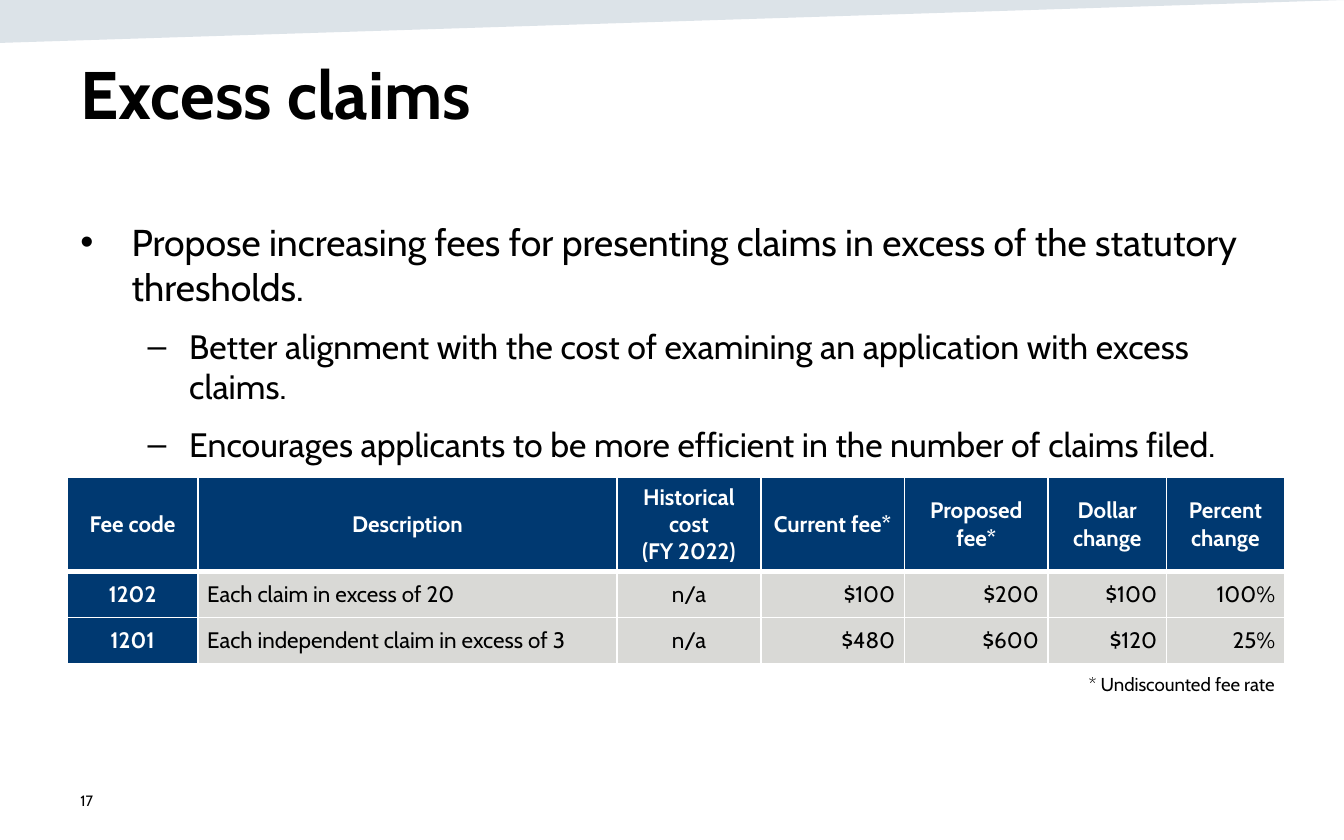
from dataclasses import dataclass

from lxml import etree
from pptx import Presentation
from pptx.dml.color import RGBColor
from pptx.enum.text import MSO_ANCHOR, PP_ALIGN
from pptx.oxml.ns import qn
from pptx.util import Pt

LEFT, CENTER, RIGHT = PP_ALIGN.LEFT, PP_ALIGN.CENTER, PP_ALIGN.RIGHT
TOP, MIDDLE = MSO_ANCHOR.TOP, MSO_ANCHOR.MIDDLE
FONT = "Cabin"
BLACK, WHITE, NAVY, GRAY, TEAL = "000000", "FFFFFF", "003971", "D9D9D6", "164469"
TITLE_ONLY = 5


@dataclass
class Bullet:
    text: str
    level: int
    size: float
    mark: str
    margin: float
    hanging: float


@dataclass
class Column:
    width: float
    align: PP_ALIGN
    texts: tuple[str, str, str]


BULLETS = [
    Bullet("Propose increasing fees for presenting claims in excess of the statutory thresholds.",
           0, 20, "•", 27.4, 27.4),
    Bullet("Better alignment with the cost of examining an application with excess claims.",
           1, 18.1, "–", 58.3, 22.3),
    Bullet("Encourages applicants to be more efficient in the number of claims filed.",
           1, 18.1, "–", 58.3, 22.3),
]

COLUMNS = [
    Column(70, CENTER, ("Fee code", "1202", "1201")),
    Column(224.6, LEFT, ("Description", "Each claim in excess of 20",
                         "Each independent claim in excess of 3")),
    Column(77, CENTER, ("Historical cost\n(FY 2022)", "n/a", "n/a")),
    Column(77, RIGHT, ("Current fee*", "$100", "$480")),
    Column(77, RIGHT, ("Proposed fee*", "$200", "$600")),
    Column(63.3, RIGHT, ("Dollar change", "$100", "$120")),
    Column(63.3, RIGHT, ("Percent change", "100%", "25%")),
]
ROW_HEIGHTS = [50.2, 24.8, 24.8]


def color(value: str) -> RGBColor:
    return RGBColor.from_string(value)


def format_text(frame, size: float, ink: str = BLACK, bold: bool = False,
                align: PP_ALIGN = LEFT) -> None:
    for para in frame.paragraphs:
        para.alignment = align
        for span in para.runs:
            span.font.name = FONT
            span.font.size = Pt(size)
            span.font.bold = bold
            span.font.color.rgb = color(ink)


def add_text(page, left: float, top: float, width: float, height: float, text: str,
             size: float, align: PP_ALIGN = LEFT, anchor: MSO_ANCHOR = TOP):
    box = page.shapes.add_textbox(Pt(left), Pt(top), Pt(width), Pt(height))
    frame = box.text_frame
    frame.word_wrap = True
    frame.vertical_anchor = anchor
    frame.text = text
    format_text(frame, size, align=align)
    return frame


def add_bullet(para, bullet: Bullet) -> None:
    para.level = bullet.level
    para.space_before = Pt(9)
    for span in para.runs:
        span.font.size = Pt(bullet.size)
    properties = para._p.get_or_add_pPr()
    properties.set("marL", str(Pt(bullet.margin)))
    properties.set("indent", str(-Pt(bullet.hanging)))
    etree.SubElement(properties, qn("a:buFont")).set("typeface", "Arial")
    etree.SubElement(properties, qn("a:buChar")).set("char", bullet.mark)


def set_borders(cell, widths: dict[str, float]) -> None:
    properties = cell._tc.get_or_add_tcPr()
    for index, (side, width) in enumerate(widths.items()):
        line = etree.Element(qn(f"a:ln{side}"), w=str(Pt(width)))
        fill = etree.SubElement(line, qn("a:solidFill"))
        etree.SubElement(fill, qn("a:srgbClr")).set("val", WHITE)
        properties.insert(index, line)


def fill_cell(cell, text: str, row: int, is_code: bool, align: PP_ALIGN) -> None:
    is_header = row == 0
    is_dark = is_header or is_code
    cell.margin_left = cell.margin_right = Pt(5)
    cell.margin_top = cell.margin_bottom = Pt(0)
    cell.vertical_anchor = MIDDLE
    cell.fill.solid()
    cell.fill.fore_color.rgb = color(NAVY if is_dark else GRAY)
    cell.text_frame.text = text
    format_text(cell.text_frame, 12, WHITE if is_dark else BLACK, is_dark,
                CENTER if is_header else align)
    if not is_header:
        for para in cell.text_frame.paragraphs:
            para.space_before = para.space_after = Pt(6)
    set_borders(cell, {"L": 1, "R": 1, "T": 3 if row == 1 else 1, "B": 3 if is_header else 1})


def add_fee_table(page, left: float, top: float) -> None:
    width = sum(column.width for column in COLUMNS)
    frame = page.shapes.add_table(len(ROW_HEIGHTS), len(COLUMNS), Pt(left), Pt(top),
                                  Pt(width), Pt(sum(ROW_HEIGHTS)))
    table = frame.table
    table.horz_banding = False
    for row, height in enumerate(ROW_HEIGHTS):
        table.rows[row].height = Pt(height)
    for index, column in enumerate(COLUMNS):
        table.columns[index].width = Pt(column.width)
        for row, text in enumerate(column.texts):
            fill_cell(table.cell(row, index), text, row, index == 0, column.align)


def add_top_wedge(page) -> None:
    builder = page.shapes.build_freeform(0, 0)
    builder.add_line_segments([(0, Pt(23)), (Pt(720), 0)], close=True)
    wedge = builder.convert_to_shape()
    wedge.shadow.inherit = False
    wedge.line.fill.background()
    wedge.fill.solid()
    wedge.fill.fore_color.rgb = color(TEAL)
    tint = wedge._element.spPr.find(f".//{qn('a:srgbClr')}")
    etree.SubElement(tint, qn("a:alpha")).set("val", "15000")


def main() -> None:
    deck = Presentation()
    deck.slide_width, deck.slide_height = Pt(720), Pt(450)
    page = deck.slides.add_slide(deck.slide_layouts[TITLE_ONLY])

    # Top band
    add_top_wedge(page)

    # Title
    title = page.shapes.title
    title.left, title.top, title.width, title.height = Pt(36), Pt(24.5), Pt(648), Pt(75)
    title.text_frame.text = "Excess claims"
    title.text_frame.vertical_anchor = TOP
    format_text(title.text_frame, 36, bold=True)

    # Bullets
    body = add_text(page, 36, 113.8, 648, 155.5,
                    "\n".join(bullet.text for bullet in BULLETS), 20)
    for para, bullet in zip(body.paragraphs, BULLETS):
        add_bullet(para, bullet)

    # Fee table and its footnote
    add_fee_table(page, 36, 255.9)
    add_text(page, 50.4, 357.1, 639.4, 19.4, "* Undiscounted fee rate", 10, RIGHT)

    # Slide number
    add_text(page, 36, 416.9, 162, 23.8, "17", 8, anchor=MIDDLE)

    deck.save("out.pptx")


if __name__ == "__main__":
    main()
